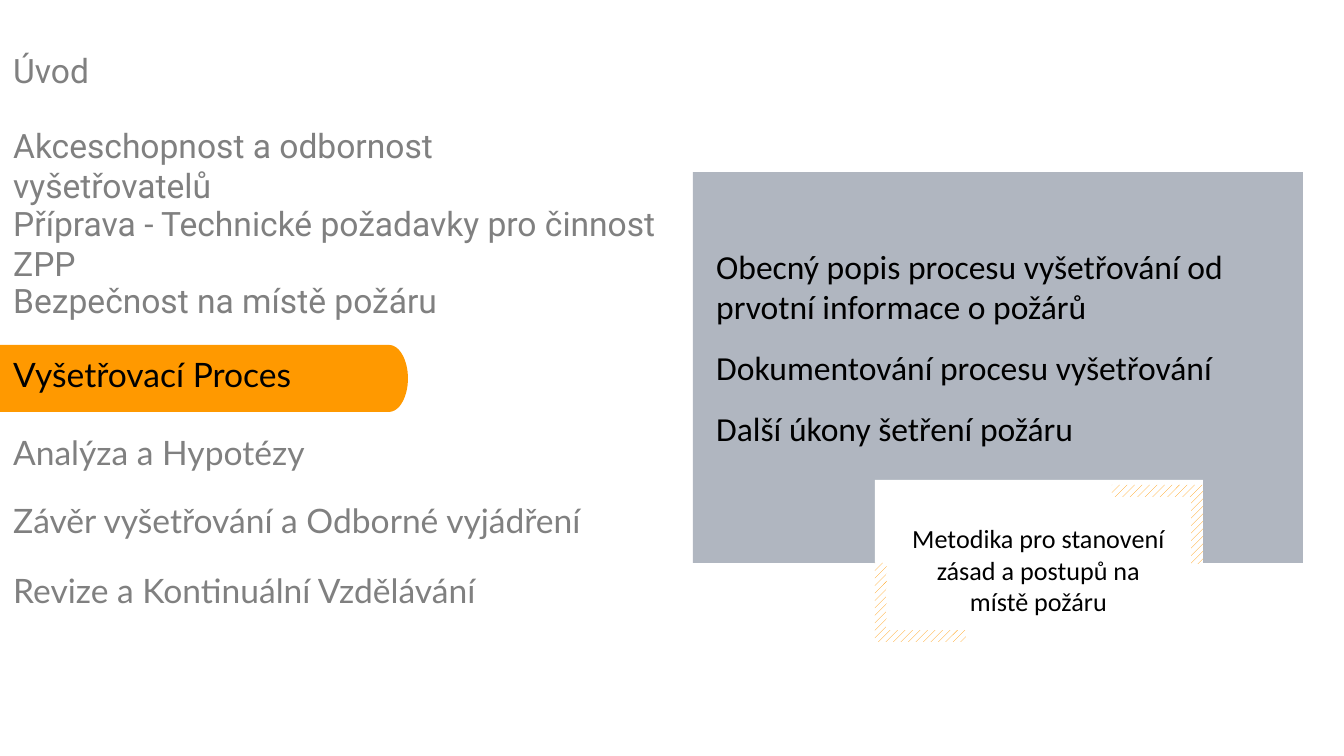
"""Build the slide on the investigation process: outline, topic panel and method note."""
from math import cos, pi, sin

from lxml import etree
from pptx import Presentation
from pptx.dml.color import RGBColor
from pptx.enum.dml import MSO_PATTERN
from pptx.enum.shapes import MSO_SHAPE
from pptx.enum.text import MSO_AUTO_SIZE, PP_ALIGN
from pptx.oxml.ns import qn
from pptx.util import Pt

PX = 914400 / 134.4
COLORS = {
    "accent": "FF9900",
    "panel": "0C1F3D",
    "muted": "808080",
    "text": "000000",
    "paper": "FFFFFF",
}
STEP_HEIGHT = 54
STEPS = [
    ("Úvod", 43, 108, "Roboto", "muted"),
    ("Akceschopnost a odbornost vyšetřovatelů", 118, 610, "Roboto", "muted"),
    ("Příprava - Technické požadavky pro činnost ZPP", 196, 680, "Roboto", "muted"),
    ("Bezpečnost na místě požáru", 273, 499, "Roboto", "muted"),
    ("Vyšetřovací Proces", 347, 530, "Lato", "text"),
    ("Analýza a Hypotézy", 425, 530, "Lato", "muted"),
    ("Závěr vyšetřování a Odborné vyjádření", 493, 624, "Lato", "muted"),
    ("Revize a Kontinuální Vzdělávání", 563, 624, "Lato", "muted"),
]
TOPICS = [
    "Obecný popis procesu vyšetřování od prvotní informace o požárů",
    "Dokumentování procesu vyšetřování",
    "Další úkony šetření požáru",
]
NOTE = "Metodika pro stanovení zásad a postupů na místě požáru"
TAB = {"left": -3, "top": 345, "bottom": 412, "straight": 389, "bulge": 19}
PANEL_BOX = (693, 172, 610, 391)
TOPICS_BOX = (703, 239, 590, 218)
NOTE_BOX = (875, 480, 328, 162)
NOTE_TEXT_BOX = (896, 516, 285, 109)
NOTE_CORNERS = [((875, 563, 91, 79), 0), ((1112, 485, 91, 79), 180)]


def emu(*lengths):
    return [round(length * PX) for length in lengths]


def color(name):
    return RGBColor.from_string(COLORS[name])


def paint(shape, name):
    shape.shadow.inherit = False
    shape.line.fill.background()
    shape.fill.solid()
    shape.fill.fore_color.rgb = color(name)


def add_block(shapes, kind, box, name):
    block = shapes.add_shape(kind, *emu(*box))
    paint(block, name)
    return block


def add_text(shapes, box, lines, font, size, name, align=PP_ALIGN.LEFT, gap=0):
    frame = shapes.add_textbox(*emu(*box)).text_frame
    frame.word_wrap = True
    frame.auto_size = MSO_AUTO_SIZE.SHAPE_TO_FIT_TEXT
    frame.text = "\n".join(lines)
    for index, paragraph in enumerate(frame.paragraphs):
        paragraph.alignment = align
        paragraph.space_before = Pt(gap if index else 0)
        for run in paragraph.runs:
            run.font.name = font
            run.font.size = Pt(size)
            run.font.color.rgb = color(name)


def add_tab(shapes):
    middle = (TAB["top"] + TAB["bottom"]) / 2
    radius = (TAB["bottom"] - TAB["top"]) / 2
    angles = [-pi / 2 + pi * step / 32 for step in range(33)]
    curve = [
        emu(TAB["straight"] + TAB["bulge"] * cos(angle), middle + radius * sin(angle))
        for angle in angles
    ]
    outline = shapes.build_freeform(*emu(TAB["left"], TAB["top"]))
    outline.add_line_segments(curve + [emu(TAB["left"], TAB["bottom"])])
    paint(outline.convert_to_shape(), "accent")


def add_panel(shapes):
    panel = add_block(shapes, MSO_SHAPE.RECTANGLE, PANEL_BOX, "panel")
    fill_color = panel.fill._xPr.find(qn("a:solidFill"))[0]
    etree.SubElement(fill_color, qn("a:alpha"), val="32000")


def add_note(shapes):
    note = shapes.add_group_shape().shapes
    add_block(note, MSO_SHAPE.RECTANGLE, NOTE_BOX, "paper")
    add_text(note, NOTE_TEXT_BOX, [NOTE], "Calibri", 14, "text", PP_ALIGN.CENTER)
    for box, rotation in NOTE_CORNERS:
        corner = add_block(note, MSO_SHAPE.CORNER, box, "accent")
        corner.rotation = rotation
        corner.adjustments[0] = corner.adjustments[1] = 0.15
        corner.fill.patterned()
        corner.fill.pattern = MSO_PATTERN.WIDE_UPWARD_DIAGONAL
        corner.fill.fore_color.rgb = color("accent")
        corner.fill.back_color.rgb = color("paper")


def main():
    presentation = Presentation()
    presentation.slide_width, presentation.slide_height = emu(1344, 756)
    shapes = presentation.slides.add_slide(presentation.slide_layouts[6]).shapes
    add_tab(shapes)
    add_panel(shapes)
    for label, top, width, font, name in STEPS:
        add_text(shapes, (0, top, width, STEP_HEIGHT), [label], font, 18, name)
    add_text(shapes, TOPICS_BOX, TOPICS, "Calibri", 18, "text", gap=11)
    add_note(shapes)
    presentation.save("out.pptx")


if __name__ == "__main__":
    main()
